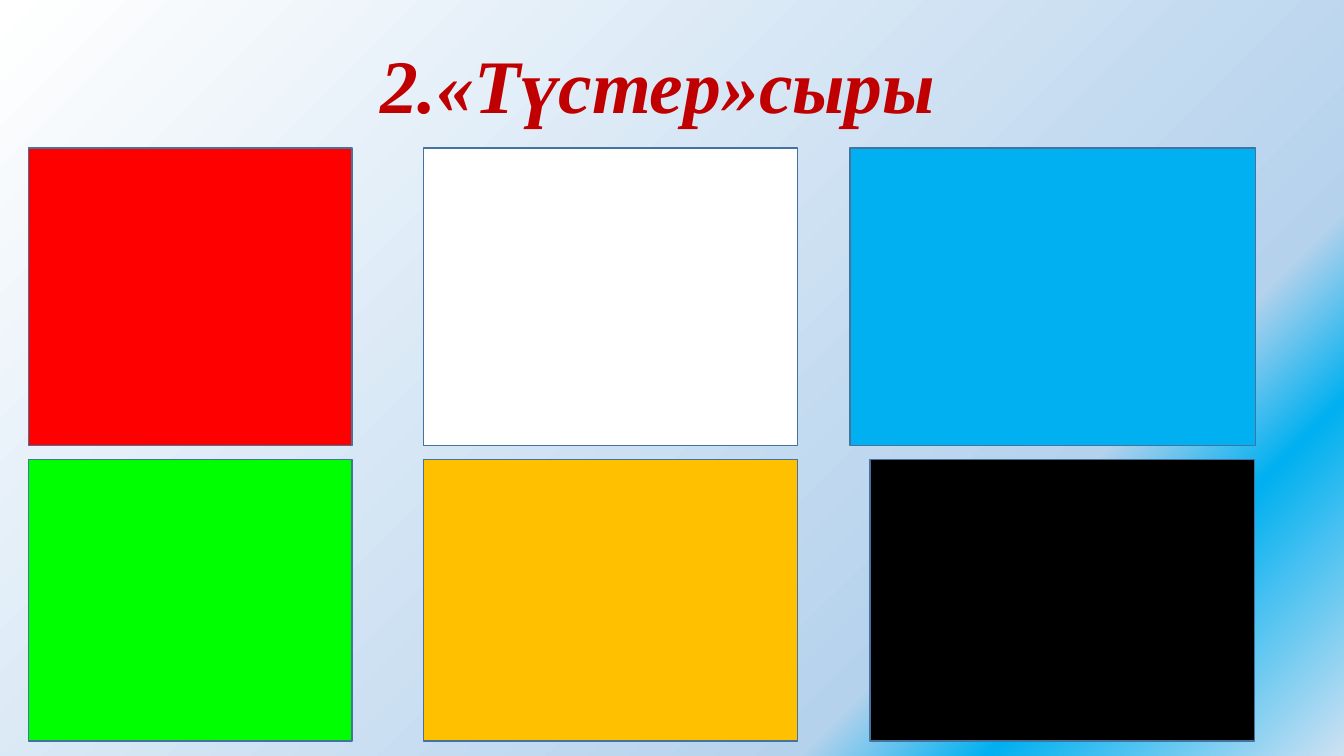
import pptx
import pptx.dml.color
import pptx.enum.shapes
import pptx.enum.text
import pptx.oxml
import pptx.oxml.ns
import pptx.util
from pptx.dml.color import RGBColor
from pptx.util import Inches

TITLE = "2.«Түстер»сыры"
TITLE_BOX = (2.87, 0.33, 7.31, 1.01)
TITLE_COLOR = RGBColor(0xC0, 0x00, 0x00)
OUTLINE = RGBColor(0x43, 0x73, 0x9E)

RED = RGBColor(0xFF, 0x00, 0x00)
WHITE = RGBColor(0xFF, 0xFF, 0xFF)
SKY = RGBColor(0x00, 0xB0, 0xF0)
GREEN = RGBColor(0x00, 0xFF, 0x00)
AMBER = RGBColor(0xFF, 0xC0, 0x00)
BLACK = RGBColor(0x00, 0x00, 0x00)
PALE_BLUE = RGBColor(0xB5, 0xD2, 0xEC)
LIGHT_BLUE = RGBColor(0xCE, 0xE1, 0xF2)

# Position in percent, colour
BACKGROUND_STOPS = [(0, WHITE), (74, PALE_BLUE), (83, SKY), (100, LIGHT_BLUE)]

# Top, height, then (left, width, colour) of each card
CARD_ROWS = [
    (1.47, 2.95, [(0.28, 3.21, RED), (4.2, 3.71, WHITE), (8.43, 4.02, SKY)]),
    (4.56, 2.79, [(0.28, 3.21, GREEN), (4.2, 3.71, AMBER), (8.63, 3.81, BLACK)]),
]


def paint_background(slide):
    fill = slide.background.fill
    fill.gradient()
    fill.gradient_angle = 315  # counter-clockwise, so it runs down to the right
    stop_list = slide.element.find(".//" + pptx.oxml.ns.qn("a:gsLst"))
    for stop in list(stop_list):
        stop_list.remove(stop)
    for percent, color in BACKGROUND_STOPS:
        stop_list.append(pptx.oxml.parse_xml(
            f'<a:gs {pptx.oxml.ns.nsdecls("a")} pos="{percent * 1000}">'
            f'<a:srgbClr val="{color}"/></a:gs>'))


def write_text(shape, text, *, size, color, font, bold=False, italic=False):
    frame = shape.text_frame
    frame.word_wrap = True
    frame.vertical_anchor = pptx.enum.text.MSO_ANCHOR.TOP
    paragraph = frame.paragraphs[0]
    paragraph.alignment = pptx.enum.text.PP_ALIGN.CENTER
    run = paragraph.add_run()
    run.text = text
    run.font.name = font
    run.font.size = pptx.util.Pt(size)
    run.font.bold = bold
    run.font.italic = italic
    run.font.color.rgb = color


def add_card(slide, left, top, width, height, color):
    card = slide.shapes.add_shape(
        pptx.enum.shapes.MSO_SHAPE.RECTANGLE,
        Inches(left), Inches(top), Inches(width), Inches(height))
    card.shadow.inherit = False
    card.fill.solid()
    card.fill.fore_color.rgb = color
    card.line.color.rgb = OUTLINE
    card.line.width = pptx.util.Pt(1)


def main():
    presentation = pptx.Presentation()
    presentation.slide_width = Inches(13.33)
    presentation.slide_height = Inches(7.5)
    slide = presentation.slides.add_slide(presentation.slide_layouts[5])
    paint_background(slide)

    title = slide.shapes.title
    title.left, title.top, title.width, title.height = map(Inches, TITLE_BOX)
    write_text(title, TITLE, size=54, color=TITLE_COLOR,
               font="Times New Roman", bold=True, italic=True)

    for top, height, cards in CARD_ROWS:
        for left, width, color in cards:
            add_card(slide, left, top, width, height, color)

    presentation.save("out.pptx")


if __name__ == "__main__":
    main()
